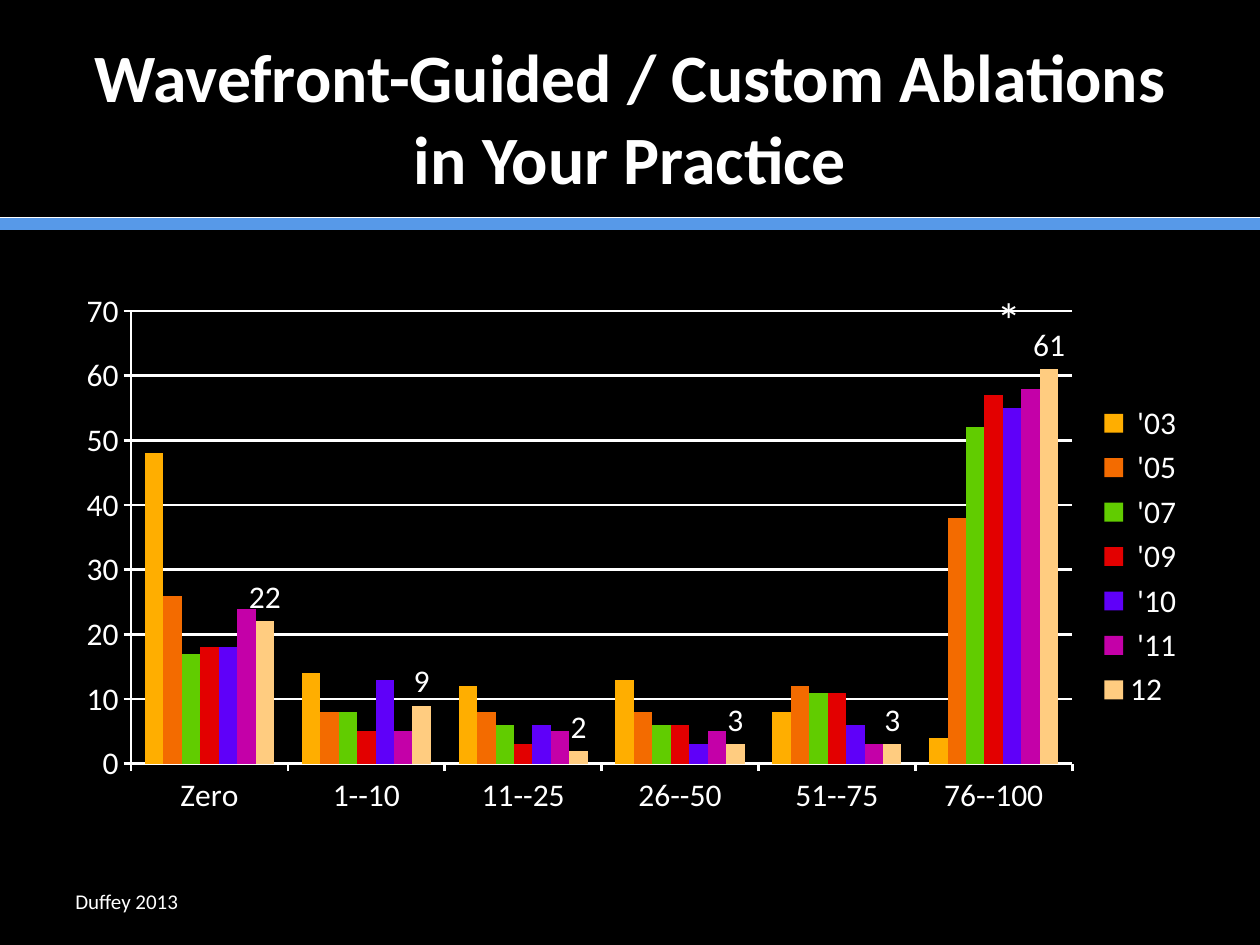
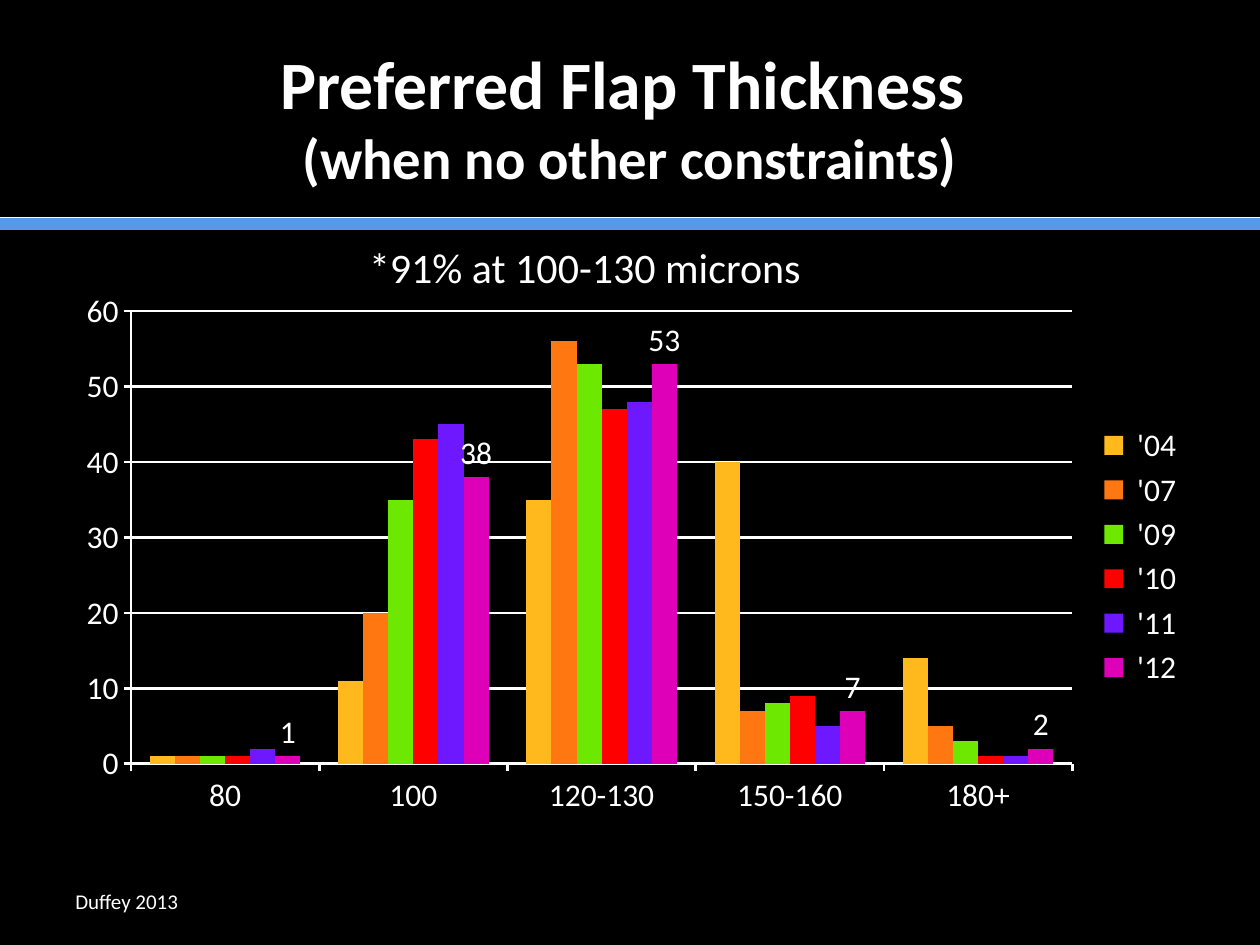
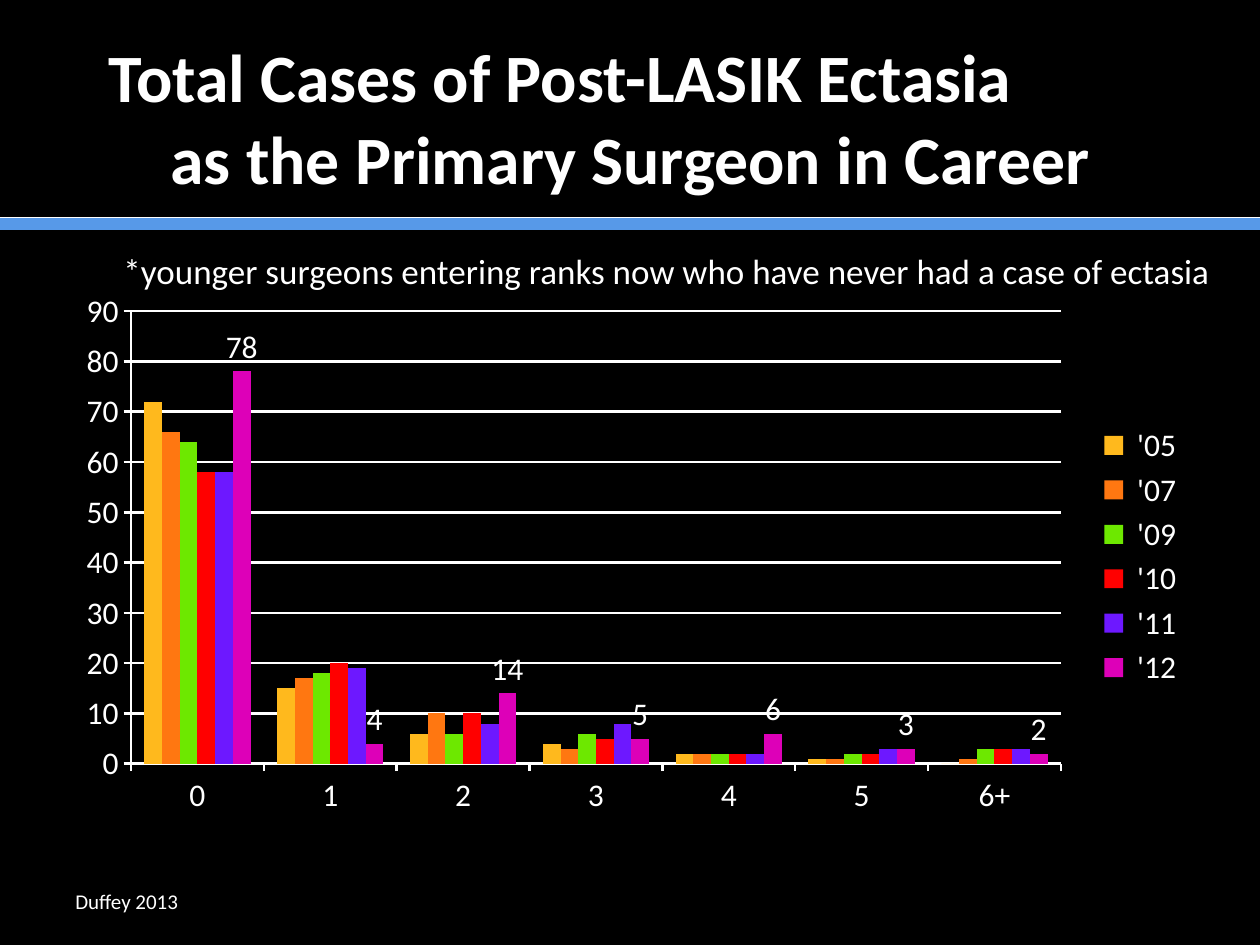
from dataclasses import dataclass

from lxml import etree
from pptx import Presentation
from pptx.chart.data import CategoryChartData
from pptx.dml.color import RGBColor
from pptx.enum.chart import (XL_CHART_TYPE, XL_LABEL_POSITION,
                             XL_LEGEND_POSITION, XL_TICK_MARK)
from pptx.enum.shapes import MSO_CONNECTOR
from pptx.enum.text import MSO_ANCHOR, PP_ALIGN
from pptx.oxml.ns import qn
from pptx.util import Cm, Pt

CLUSTERED = XL_CHART_TYPE.COLUMN_CLUSTERED
OUTSIDE_END = XL_LABEL_POSITION.OUTSIDE_END
LEGEND_RIGHT = XL_LEGEND_POSITION.RIGHT
TICK_OUT, TICK_NONE = XL_TICK_MARK.OUTSIDE, XL_TICK_MARK.NONE
STRAIGHT = MSO_CONNECTOR.STRAIGHT
TOP, MIDDLE = MSO_ANCHOR.TOP, MSO_ANCHOR.MIDDLE
LEFT, CENTER = PP_ALIGN.LEFT, PP_ALIGN.CENTER


@dataclass(frozen=True)
class Theme:
    """Colours, font and type sizes shared by the slides."""
    font: str = "Calibri"
    background: str = "000000"
    text: str = "FFFFFF"
    band: str = "5799E8"
    deep: tuple = ("FFAE00", "F36B00", "61CC00", "E30000", "5F00F9",
                   "C400A8", "FFCC80")
    bright: tuple = ("FFB91D", "FF7711", "6DE800", "FF0000", "6D18FF",
                     "DD00B8")
    title: float = 38.7
    subtitle: float = 32.4
    star: float = 28
    callout: float = 24
    note: float = 20
    chart: float = 18
    footer: float = 12


THEME = Theme()


def rgb(value):
    """Turn a hex string into a colour."""
    return RGBColor.from_string(value)


def set_font(font, size, bold=False):
    """Apply the theme's typeface and text colour at a given size."""
    formats = {"name": THEME.font, "size": Pt(size), "bold": bold}
    for name, value in formats.items():
        setattr(font, name, value)
    font.color.rgb = rgb(THEME.text)


def add_text(s, box, lines, anchor=TOP, align=LEFT, bold=False, wrap=True):
    """Add a text box with one paragraph per (text, size) pair."""
    tf = s.shapes.add_textbox(*map(Cm, box)).text_frame
    tf.word_wrap, tf.vertical_anchor = wrap, anchor
    for i, (text, size) in enumerate(lines):
        p = tf.add_paragraph() if i else tf.paragraphs[0]
        p.alignment = align
        r = p.add_run()
        r.text = text
        set_font(r.font, size, bold)
    return tf


def add_rule(s, y, color, width):
    """Draw a horizontal rule across the slide."""
    line = s.shapes.add_connector(STRAIGHT, 0, Cm(y), Cm(25.4), Cm(y))
    line.line.color.rgb = rgb(color)
    line.line.width = Pt(width)
    etree.SubElement(line._element.spPr, qn("a:effectLst"))


def add_base(prs, title_lines):
    """Add a slide with background, rules, title and footer."""
    s = prs.slides.add_slide(prs.slide_layouts[6])
    s.background.fill.solid()
    s.background.fill.fore_color.rgb = rgb(THEME.background)
    add_rule(s, 4.52, THEME.band, 7)
    add_rule(s, 4.39, THEME.text, 0.5)
    title = add_text(s, (1.27, 0.76, 22.86, 3.18), title_lines,
                     MIDDLE, CENTER, bold=True)
    add_text(s, (1.27, 17.65, 8.05, 1.02), [("Duffey 2013", THEME.footer)],
             MIDDLE)
    return s, title


def place_plot(chart, width):
    """Fix the inner plot area as fractions of the chart."""
    plot_area = chart._chartSpace.chart.plotArea
    for old in plot_area.findall(qn("c:layout")):
        plot_area.remove(old)
    layout = etree.Element(qn("c:layout"))
    manual = etree.SubElement(layout, qn("c:manualLayout"))
    values = {"layoutTarget": "inner", "xMode": "edge", "yMode": "edge",
              "x": 0.06, "y": 0.05, "w": width, "h": 0.83}
    for tag, value in values.items():
        etree.SubElement(manual, qn(f"c:{tag}")).set("val", str(value))
    plot_area.insert(0, layout)


def style_axis(axis):
    """Give an axis white lines, outer ticks and theme text."""
    formats = {"major_tick_mark": TICK_OUT, "minor_tick_mark": TICK_NONE}
    for name, value in formats.items():
        setattr(axis, name, value)
    axis.format.line.color.rgb = rgb(THEME.text)
    axis.format.line.width = Pt(1.5)
    set_font(axis.tick_labels.font, THEME.chart)


def add_columns(s, categories, series, colors, maximum, plot_width=0.83):
    """Add a clustered column chart that labels its last series."""
    data = CategoryChartData(number_format="0")
    data.categories = categories
    for name, values in series.items():
        data.add_series(name, values)
    box = map(Cm, (1.27, 5.72, 22.86, 11))
    chart = s.shapes.add_chart(CLUSTERED, *box, data).chart
    set_font(chart.font, THEME.chart)
    chart.has_title = False
    chart.has_legend = True
    chart.legend.position = LEGEND_RIGHT
    chart.legend.include_in_layout = False
    set_font(chart.legend.font, THEME.chart)

    plot = chart.plots[0]
    plot.gap_width, plot.overlap, plot.vary_by_categories = 150, 0, False
    for ser, color in zip(plot.series, colors):
        ser.format.fill.solid()
        ser.format.fill.fore_color.rgb = rgb(color)
        ser.invert_if_negative = False
    labels = plot.series[len(series) - 1].data_labels
    labels.show_value = True
    labels.position = OUTSIDE_END
    set_font(labels.font, THEME.chart)

    style_axis(chart.category_axis)
    axis = chart.value_axis
    style_axis(axis)
    scale = {"minimum_scale": 0, "maximum_scale": maximum, "major_unit": 10,
             "has_major_gridlines": True}
    for name, value in scale.items():
        setattr(axis, name, value)
    grid = axis.major_gridlines.format.line
    grid.color.rgb = rgb(THEME.text)
    grid.width = Pt(1.5)
    place_plot(chart, plot_width)


def add_ablations(prs):
    """Build the slide on custom ablations."""
    title = "Wavefront-Guided / Custom Ablations in Your Practice"
    s, _ = add_base(prs, [(title, THEME.title)])
    add_columns(
        s, ["Zero", "1--10", "11--25", "26--50", "51--75", "76--100"],
        {" '03": (48, 14, 12, 13, 8, 4),
         " '05": (26, 8, 8, 8, 12, 38),
         " '07": (17, 8, 6, 6, 11, 52),
         " '09": (18, 5, 3, 6, 11, 57),
         " '10": (18, 13, 6, 3, 6, 55),
         " '11": (24, 5, 5, 5, 3, 58),
         "12": (22, 9, 2, 3, 3, 61)},
        THEME.deep, 70)
    add_text(s, (19.84, 5.72, 1.04, 2.24), [("*", THEME.star)], wrap=False)


def add_flap_thickness(prs):
    """Build the slide on flap thickness."""
    s, _ = add_base(prs, [("Preferred Flap Thickness ", THEME.title),
                          ("(when no other constraints)", THEME.subtitle)])
    add_columns(
        s, ["80", "100", "120-130", "150-160", "180+"],
        {" '04": (1, 11, 35, 40, 14),
         " '07": (1, 20, 56, 7, 5),
         " '09": (1, 35, 53, 8, 3),
         " '10": (1, 43, 47, 9, 1),
         " '11": (2, 45, 48, 5, 1),
         " '12": (1, 38, 53, 7, 2)},
        THEME.bright, 60)
    add_text(s, (7.19, 4.75, 10.16, 1.3),
             [("*91% at 100-130 microns", THEME.callout)])


def add_ectasia(prs):
    """Build the slide on ectasia cases."""
    s, title = add_base(prs, [
        ("Total Cases of Post-LASIK Ectasia", THEME.title),
        ("as the Primary Surgeon in Career", THEME.title)])
    for p, indent in zip(title.paragraphs, (0.67, 1.92)):
        p.alignment = LEFT
        p._p.get_or_add_pPr().set("marL", str(Cm(indent)))
    add_columns(
        s, ["0", "1", "2", "3", "4", "5", "6+"],
        {" '05": (72, 15, 6, 4, 2, 1, 0),
         " '07": (66, 17, 10, 3, 2, 1, 1),
         " '09": (64, 18, 6, 6, 2, 2, 3),
         " '10": (58, 20, 10, 5, 2, 2, 3),
         " '11": (58, 19, 8, 8, 2, 3, 3),
         " '12": (78, 4, 14, 5, 6, 3, 2)},
        THEME.bright, 90, plot_width=0.82)
    note = "*younger surgeons entering ranks now who have never had a case of ectasia"
    add_text(s, (2.24, 4.9, 22.83, 1.12), [(note, THEME.note)], wrap=False)


def main():
    """Build and save the presentation."""
    prs = Presentation()
    prs.slide_width, prs.slide_height = Cm(25.4), Cm(19.05)
    add_ablations(prs)
    add_flap_thickness(prs)
    add_ectasia(prs)
    prs.save("out.pptx")


if __name__ == "__main__":
    main()
